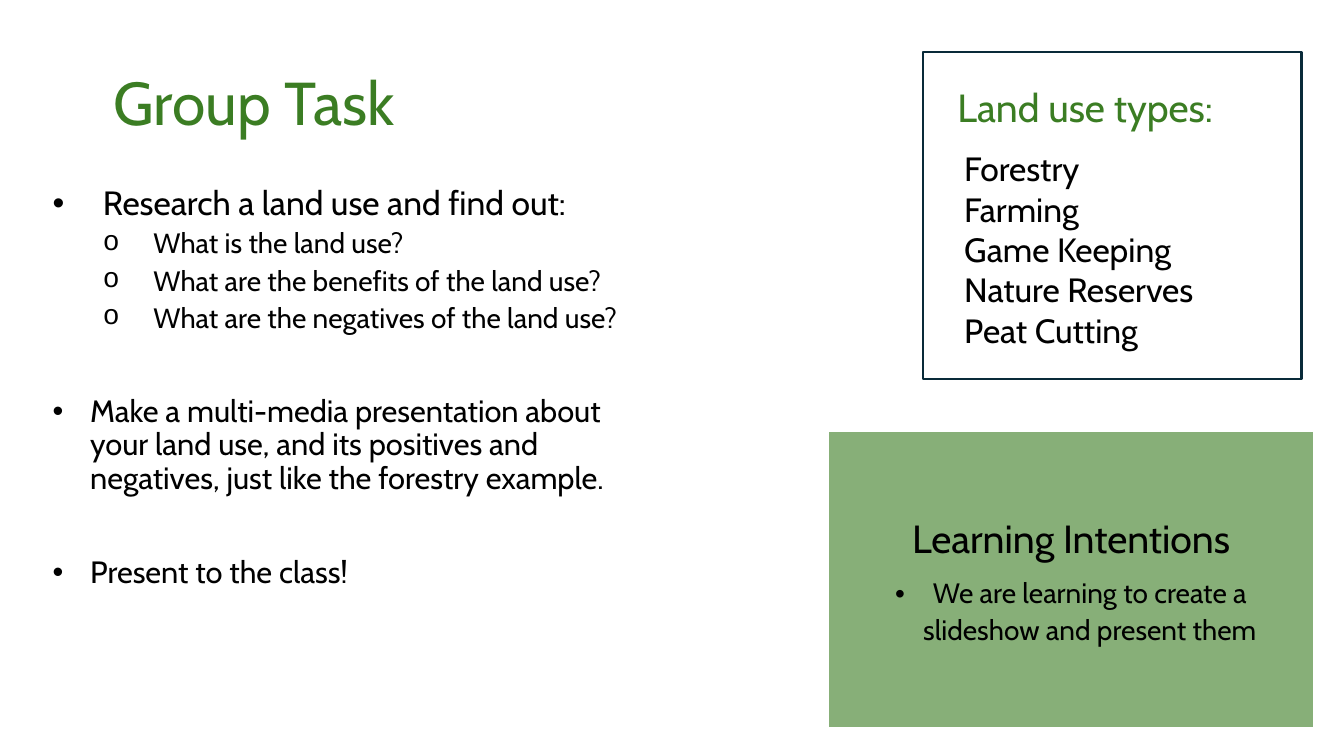
import pptx
import pptx.util
import pptx.dml.color
import pptx.enum.shapes
import pptx.enum.text
import lxml.etree

Cm, Pt = pptx.util.Cm, pptx.util.Pt
ALIGN = pptx.enum.text.PP_ALIGN
ANCHOR = pptx.enum.text.MSO_ANCHOR
colour = pptx.dml.color.RGBColor.from_string
GREEN, BLACK, NAVY = "3B7D23", "000000", "092A39"


def add_element(parent, tag, **attributes):
    name = pptx.oxml.ns.qn(tag)
    return lxml.etree.SubElement(parent, name, attributes)


def format_paragraph(paragraph, size, ink=BLACK, align=ALIGN.LEFT, line=0.9,
                     before=0, after=0, bullet=None, left=0, hang=0):
    properties = paragraph._p.get_or_add_pPr()
    properties.set("marL", str(Cm(left)))
    properties.set("indent", str(-Cm(hang)))
    if bullet:
        typeface = "Courier New" if bullet == "o" else "Arial"
        add_element(properties, "a:buFont", typeface=typeface)
        add_element(properties, "a:buChar", char=bullet)
    paragraph.alignment = align
    paragraph.line_spacing = line
    paragraph.space_before = Pt(before)
    paragraph.space_after = Pt(after)
    for run in paragraph.runs:
        run.font.name = "Cabin"
        run.font.size = Pt(size)
        run.font.color.rgb = colour(ink)


presentation = pptx.Presentation()
presentation.slide_width = Cm(33.87)
presentation.slide_height = Cm(19.05)
slide = presentation.slides.add_slide(presentation.slide_layouts[0])

heading = slide.shapes.title
heading.left, heading.top, heading.width, heading.height = Cm(-2.03), Cm(1.63), Cm(17.2), Cm(1.98)
heading.text_frame.text = "Group Task "
heading.text_frame.auto_size = pptx.enum.text.MSO_AUTO_SIZE.NONE
heading.text_frame.vertical_anchor = ANCHOR.BOTTOM
format_paragraph(heading.text_frame.paragraphs[0], 43.2, GREEN, ALIGN.CENTER)

tasks = slide.placeholders[1]
tasks.left, tasks.top, tasks.width, tasks.height = Cm(1.07), Cm(4.57), Cm(15.54), Cm(10.9)
task_items = [
    ("Research a land use and find out:", 0, 24, 0, "•", 1.27, 1.27),
    ("What is the land use?", 1, 20, 5, "o", 2.54, 1.27),
    ("What are the benefits of the land use?", 1, 20, 5, "o", 2.54, 1.27),
    ("What are the negatives of the land use?", 1, 20, 5, "o", 2.54, 1.27),
    ("Make a multi-media presentation about your land use, and its positives and "
     "negatives, just like the forestry example.", 0, 22, 44, "•", 0.95, 0.95),
    ("Present to the class!", 0, 22, 44, "•", 0.95, 0.95),
]
tasks.text_frame.text = "\n".join(item[0] for item in task_items)
tasks.text_frame.auto_size = pptx.enum.text.MSO_AUTO_SIZE.NONE
for paragraph, item in zip(tasks.text_frame.paragraphs, task_items):
    wording, level, size, before, bullet, left, hang = item
    paragraph.level = level
    format_paragraph(paragraph, size, before=before, bullet=bullet, left=left, hang=hang)

types_heading = slide.shapes.add_textbox(Cm(23.88), Cm(1.32), Cm(8.28), Cm(2.9)).text_frame
types_heading.word_wrap = True
types_heading.vertical_anchor = ANCHOR.MIDDLE
types_heading.text = "Land use types:"
format_paragraph(types_heading.paragraphs[0], 28, GREEN)

types_frame = slide.shapes.add_shape(
    pptx.enum.shapes.MSO_SHAPE.RECTANGLE, Cm(23.27), Cm(1.32), Cm(9.53), Cm(8.23))
types_frame.shadow.inherit = False
types_frame.fill.background()
types_frame.line.color.rgb = colour(NAVY)
types_frame.line.width = Pt(1.5)

intentions_table = slide.shapes.add_table(1, 1, Cm(20.88), Cm(10.87), Cm(12.22), Cm(7.49)).table
intentions = intentions_table.cell(0, 0)
intentions.margin_left = intentions.margin_right = Cm(0.18)
intentions.margin_top = intentions.margin_bottom = 0
intentions.vertical_anchor = ANCHOR.MIDDLE
intentions.text = "Learning Intentions\nWe are learning to create a slideshow and present them"
intentions_title, intention = intentions.text_frame.paragraphs
format_paragraph(intentions_title, 28, align=ALIGN.CENTER, line=1.07, after=8)
format_paragraph(intention, 20, align=ALIGN.CENTER, line=1.07, after=8,
                 bullet="•", left=0.95, hang=0.95)
cell_properties = intentions._tc.get_or_add_tcPr()
for side, width in (("L", 1), ("R", 1), ("T", 1), ("B", 3)):
    border = add_element(cell_properties, f"a:ln{side}", w=str(Pt(width)))
    add_element(add_element(border, "a:solidFill"), "a:srgbClr", val="FFFFFF")
intentions.fill.solid()
intentions.fill.fore_color.rgb = colour(GREEN)
cell_fill = cell_properties.find(pptx.oxml.ns.qn("a:solidFill"))
add_element(cell_fill[0], "a:alpha", val="61000")
cell_properties.append(cell_fill)

land_uses = slide.shapes.add_textbox(Cm(24.05), Cm(3.61), Cm(7.95), Cm(5.38)).text_frame
land_uses.word_wrap = True
land_uses.text = "Forestry\nFarming\nGame Keeping\nNature Reserves\nPeat Cutting"
for paragraph in land_uses.paragraphs:
    format_paragraph(paragraph, 24, line=1.0)

presentation.save("out.pptx")
